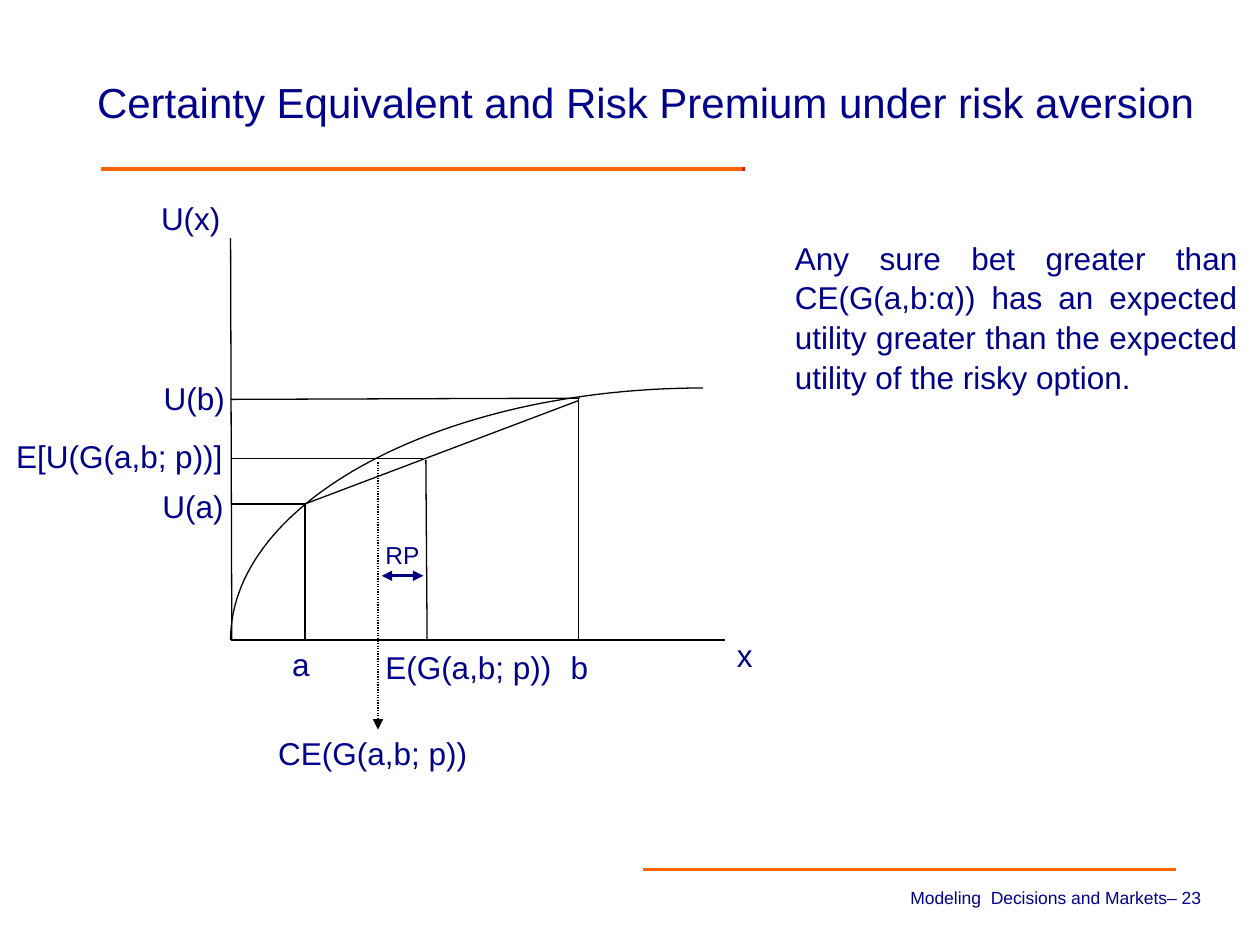
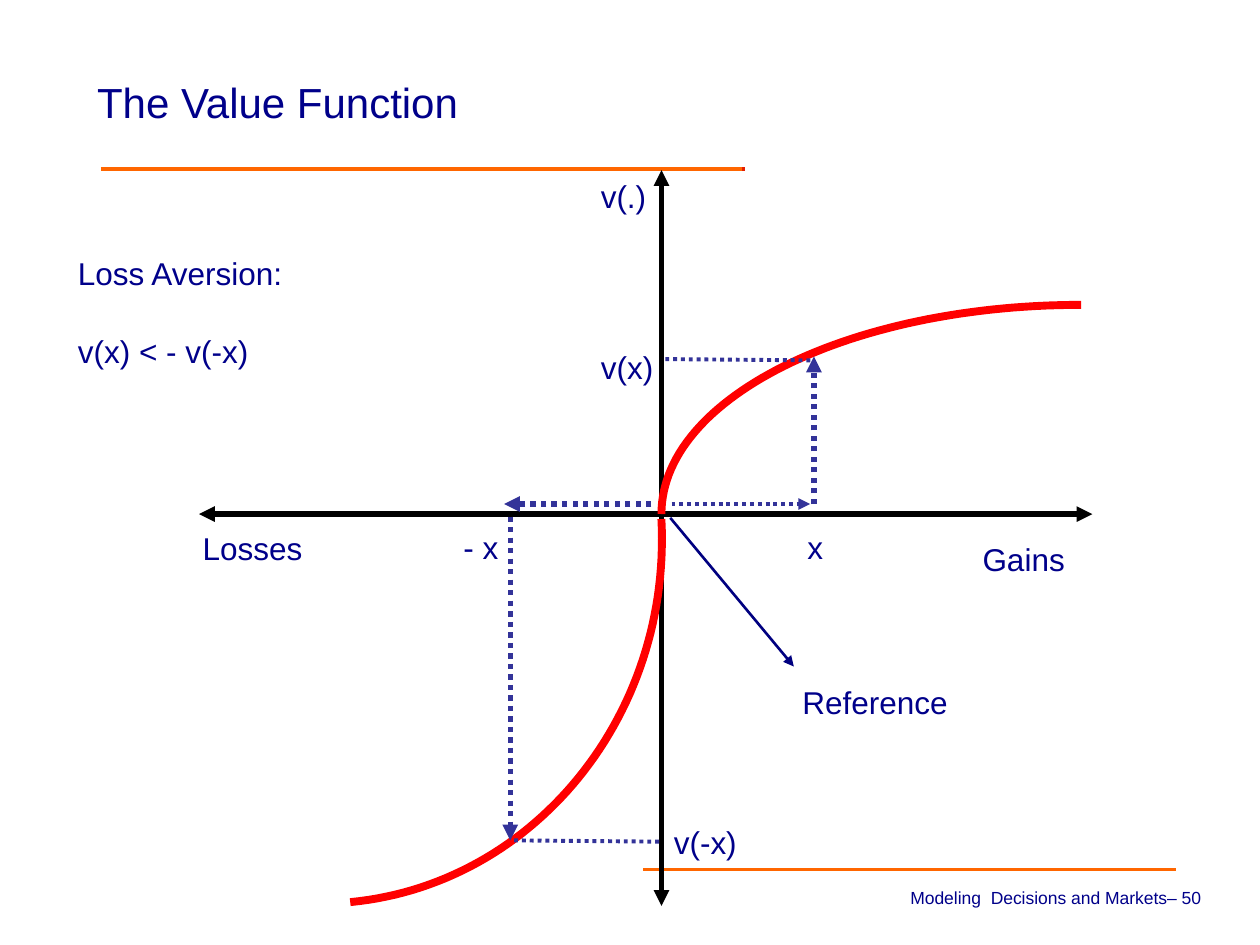
"""Build two slides on risk aversion and the value function."""
from lxml import etree
from pptx import Presentation
from pptx import util as u
from pptx.dml.color import RGBColor
from pptx.enum import dml, shapes, text
from pptx.oxml import ns

PX = 9144  # EMU in one px, at 100 px to the inch
FONT = "Arial"
INK, BLACK, ORANGE, RED = "00008A", "000000", "FF6600", "FF0000"
NAVY, INDIGO = "000080", "333399"
DOTS = dml.MSO_LINE.ROUND_DOT
LEFT, RIGHT, JUSTIFY = text.PP_ALIGN.LEFT, text.PP_ALIGN.RIGHT, text.PP_ALIGN.JUSTIFY
MIDDLE = text.MSO_ANCHOR.MIDDLE


def write(box, lines, size=18, align=LEFT, spacing=None, gap=0, anchor=text.MSO_ANCHOR.TOP):
    frame = box.text_frame
    frame.word_wrap = True
    frame.auto_size = text.MSO_AUTO_SIZE.NONE
    frame.vertical_anchor = anchor
    for index, line in enumerate(lines):
        para = frame.add_paragraph() if index else frame.paragraphs[0]
        para.alignment = align
        para.space_before = u.Pt(gap if index else 0)
        if spacing:
            para.line_spacing = spacing
        span = para.add_run()
        span.text = line
        span.font.name = FONT
        span.font.size = u.Pt(size)
        span.font.bold = False
        span.font.color.rgb = RGBColor.from_string(INK)


def draw_line(page, ends, colour, weight, dash=None, arrows=()):
    line = page.shapes.add_connector(
        shapes.MSO_CONNECTOR.STRAIGHT, *[end * PX for end in ends])
    line.line.color.rgb = RGBColor.from_string(colour)
    line.line.width = u.Pt(weight)
    if dash:
        line.line.dash_style = dash
    properties = line.element.spPr
    for arrow in arrows:
        etree.SubElement(properties.find(ns.qn("a:ln")), ns.qn(f"a:{arrow}End"), type="triangle")
    etree.SubElement(properties, ns.qn("a:effectLst"))


deck = Presentation()
deck.slide_width, deck.slide_height = 1000 * PX, 750 * PX

pages = []
for title, width, number in [
    ("Certainty Equivalent and Risk Premium under risk aversion", 915, 23),
    ("The Value Function", 877, 50),
]:
    page = deck.slides.add_slide(deck.slide_layouts[5])
    heading = page.shapes.title
    heading.left, heading.top, heading.width, heading.height = 67 * PX, 31 * PX, width * PX, 98 * PX
    write(heading, [title], 24, spacing=u.Pt(30), anchor=MIDDLE)
    draw_line(page, (80, 134, 591, 134), ORANGE, 2)
    draw_line(page, (589, 134, 591, 134), "E61E00", 2)
    draw_line(page, (933, 690, 510, 690), ORANGE, 2)
    footer = page.shapes.add_textbox(389 * PX, 699 * PX, 574 * PX, 34 * PX)
    write(footer, [f"Modeling  Decisions and Markets– {number}"], 10, RIGHT)
    pages.append(page)
utility, value = pages

both = ("head", "tail")
draw_line(utility, (183, 189, 184, 508), BLACK, 0.75)
draw_line(utility, (183, 508, 575, 508), BLACK, 0.75)
draw_line(value, (158, 408, 867, 408), BLACK, 3, arrows=both)
draw_line(value, (525, 135, 525, 719), BLACK, 3, arrows=both)

STEPS = 60
for page, colour, weight, controls in [
    (utility, BLACK, 0.75, [(558, 308), (351, 308), (183, 398), (183, 508)]),
    (value, RED, 4.5, [(858, 242), (674, 242), (525, 316), (525, 408)]),
    (value, RED, 4.5, [(278, 716), (424, 702), (533, 568), (525, 412)]),
]:
    points = []
    for step in range(STEPS + 1):
        t = step / STEPS
        weights = [(1 - t) ** 3, 3 * t * (1 - t) ** 2, 3 * t ** 2 * (1 - t), t ** 3]
        points.append([PX * sum(w * c for w, c in zip(weights, axis)) for axis in zip(*controls)])
    builder = page.shapes.build_freeform(*points[0])
    builder.add_line_segments(points[1:], close=False)
    curve = builder.convert_to_shape()
    curve.shadow.inherit = False
    curve.fill.background()
    curve.line.color.rgb = RGBColor.from_string(colour)
    curve.line.width = u.Pt(weight)

for ends in [
    (242, 508, 242, 400), (242, 400, 183, 400),
    (459, 508, 459, 317), (460, 316, 183, 317),
    (338, 365, 339, 508), (336, 364, 183, 364),
    (242, 400, 459, 318),
]:
    draw_line(utility, ends, BLACK, 0.75)
draw_line(utility, (300, 367, 300, 579), BLACK, 0.75, DOTS, ["tail"])
draw_line(utility, (303, 457, 336, 457), NAVY, 1.5, arrows=both)

for ends, weight, arrows in [
    ((533, 400, 643, 400), 2.25, ["tail"]),
    ((517, 400, 400, 400), 3, ["tail"]),
    ((646, 400, 646, 283), 3, ["tail"]),
    ((405, 410, 405, 667), 3, ["tail"]),
    ((528, 285, 644, 286), 2.25, []),
    ((408, 667, 525, 668), 2.25, []),
]:
    draw_line(value, ends, INDIGO, weight, DOTS, arrows)
draw_line(value, (532, 411, 630, 529), NAVY, 1.5, arrows=["tail"])

for page, label, left, top, width in [
    (utility, "U(x)", 118, 153, 100),
    (utility, "U(b)", 120, 296, 80),
    (utility, "E[U(G(a,b; p))]", 3, 342, 208),
    (utility, "U(a)", 119, 382, 80),
    (utility, "a", 222, 507, 46),
    (utility, "E(G(a,b; p))", 296, 509, 165),
    (utility, "b", 443, 509, 46),
    (utility, "x", 575, 500, 42),
    (utility, "CE(G(a,b; p))", 211, 578, 192),
    (value, "Losses", 151, 415, 104),
    (value, "Gains", 770, 424, 107),
    (value, "Reference", 627, 537, 159),
]:
    write(page.shapes.add_textbox(left * PX, top * PX, width * PX, 40 * PX), [label])
write(utility.shapes.add_textbox(296 * PX, 424 * PX, 55 * PX, 34 * PX), ["RP"], 14)

for label, left, top, width, height in [
    ("v(.)", 467, 121, 60, 57),
    ("v(x)", 467, 264, 75, 42),
    ("- x", 358, 407, 52, 42),
    ("x", 631, 407, 52, 42),
    ("v(-x)", 525, 641, 80, 42),
]:
    box = value.shapes.add_textbox(left * PX, top * PX, width * PX, height * PX)
    write(box, [label], spacing=u.Pt(30), anchor=MIDDLE)

remark = utility.shapes.add_textbox(621 * PX, 183 * PX, 371 * PX, 131 * PX)
write(remark, ["Any sure bet greater than CE(G(a,b:α)) has an expected utility "
               "greater than the expected utility of the risky option."],
      align=JUSTIFY, spacing=1.05)
aversion = value.shapes.add_textbox(52 * PX, 195 * PX, 222 * PX, 131 * PX)
write(aversion, ["Loss Aversion:", "v(x) < - v(-x)"], spacing=1.05, gap=22)

deck.save("out.pptx")
